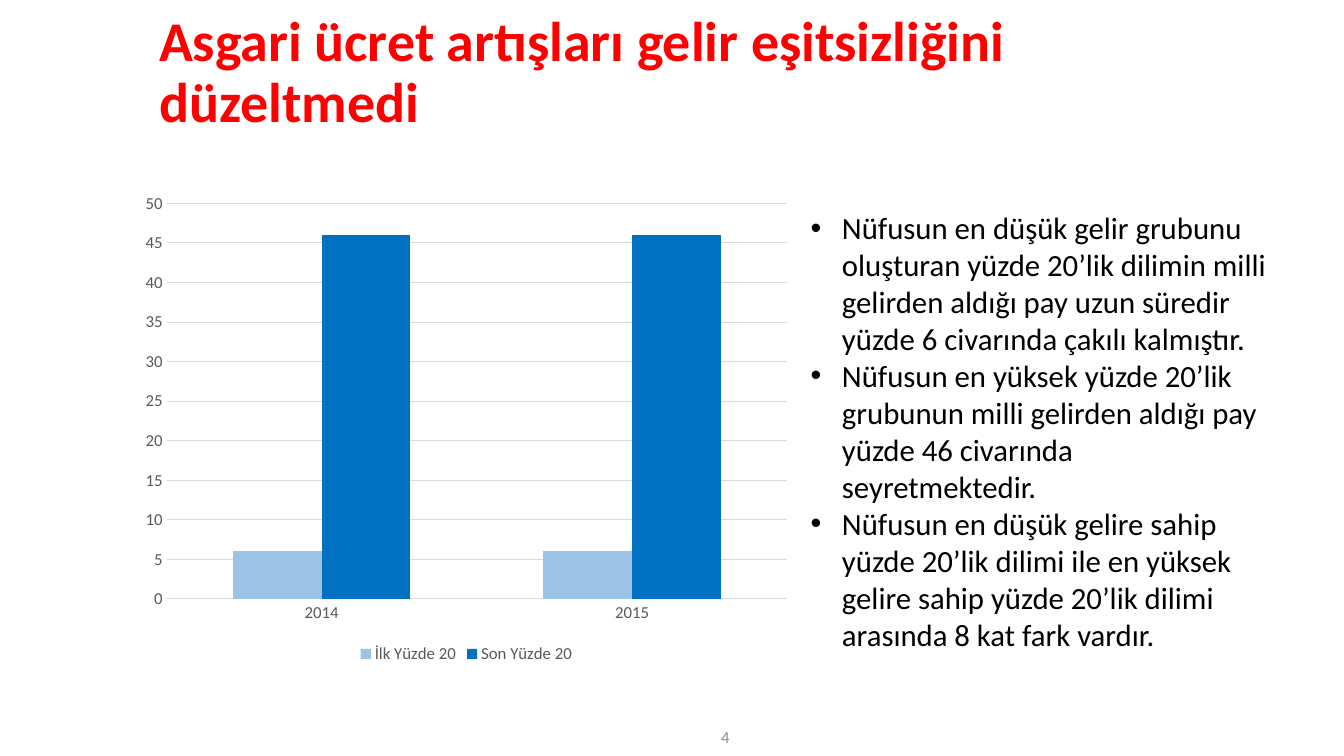
"""Builds a slide on minimum wage rises and income inequality."""
from dataclasses import dataclass

from lxml import etree
from pptx import Presentation
from pptx import util as u
from pptx.chart.data import CategoryChartData
from pptx.dml.color import RGBColor
from pptx.enum import chart as ch, text
from pptx.oxml.ns import qn


@dataclass(frozen=True)
class Theme:
    font: str = "Calibri"
    title: str = "FF0000"
    body: str = "000000"
    label: str = "595959"
    grid: str = "D9D9D9"
    page: str = "8C8C8C"
    low: str = "9DC3E6"
    high: str = "0070C0"
    big: int = 40
    mid: int = 22
    small: int = 12


class Deck:
    def __init__(self, theme):
        self.theme = theme
        self.prs = Presentation()
        self.prs.slide_width = u.Cm(33.87)
        self.prs.slide_height = u.Cm(19.05)
        self.slide = self.prs.slides.add_slide(self.prs.slide_layouts[6])

    def style(self, font, size, color, bold=False):
        font.name = self.theme.font
        font.size = u.Pt(size)
        font.bold = bold
        font.color.rgb = RGBColor.from_string(color)

    def bullet(self, para):
        props = para._p.get_or_add_pPr()
        indent = u.Cm(0.79)
        props.set("marL", str(indent))
        props.set("indent", str(-indent))
        etree.SubElement(props, qn("a:buFont"), typeface="Arial")
        etree.SubElement(props, qn("a:buChar"), char="•")

    def text(self, box, lines, size, color, bold=False, bullets=False,
             anchor=text.MSO_ANCHOR.MIDDLE, align=text.PP_ALIGN.LEFT, space=1.0):
        frame = self.slide.shapes.add_textbox(*map(u.Cm, box)).text_frame
        frame.word_wrap = True
        frame.vertical_anchor = anchor
        for i, line in enumerate(lines):
            para = frame.paragraphs[0] if i == 0 else frame.add_paragraph()
            para.text = line
            para.alignment = align
            para.line_spacing = space
            if bullets:
                self.bullet(para)
            self.style(para.font, size, color, bold)

    def chart(self, box, years, series):
        theme = self.theme
        data = CategoryChartData()
        data.categories = years
        for name, vals, _ in series:
            data.add_series(name, vals)
        kind = ch.XL_CHART_TYPE.COLUMN_CLUSTERED
        chart = self.slide.shapes.add_chart(kind, *map(u.Cm, box), data).chart
        self.style(chart.font, theme.small, theme.label)
        chart.has_title = False
        chart.has_legend = True
        chart.legend.position = ch.XL_LEGEND_POSITION.BOTTOM
        chart.legend.include_in_layout = False
        self.style(chart.legend.font, theme.small, theme.label)
        for axis in (chart.category_axis, chart.value_axis):
            axis.major_tick_mark = ch.XL_TICK_MARK.NONE
            axis.format.line.fill.background()
            self.style(axis.tick_labels.font, theme.small, theme.label)
        axis = chart.value_axis
        axis.minimum_scale, axis.maximum_scale, axis.major_unit = 0, 50, 5
        line = axis.major_gridlines.format.line
        line.color.rgb = RGBColor.from_string(theme.grid)
        line.width = u.Pt(0.75)
        plot = chart.plots[0]
        plot.gap_width, plot.overlap = 150, 0
        plot.vary_by_categories = False
        for bars, (_, _, color) in zip(plot.series, series):
            bars.format.fill.solid()
            bars.format.fill.fore_color.rgb = RGBColor.from_string(color)


def main():
    theme = Theme()
    deck = Deck(theme)
    deck.text((3.76, 0.91, 28.19, 1.91),
              ["Asgari ücret artışları gelir eşitsizliğini düzeltmedi"],
              theme.big, theme.title, bold=True, space=0.9)
    deck.chart((3.33, 4.63, 16.85, 12.2), ["2014", "2015"], [
        ("İlk Yüzde 20", (6, 6), theme.low),
        ("Son Yüzde 20", (46, 46), theme.high),
    ])
    deck.text((20.18, 5.14, 12.12, 11.53), [
        "Nüfusun en düşük gelir grubunu oluşturan yüzde 20’lik dilimin milli "
        "gelirden aldığı pay uzun süredir yüzde 6 civarında çakılı kalmıştır.",
        "Nüfusun en yüksek yüzde 20’lik grubunun milli gelirden aldığı pay "
        "yüzde 46 civarında seyretmektedir.",
        "Nüfusun en düşük gelire sahip yüzde 20’lik dilimi ile en yüksek "
        "gelire sahip yüzde 20’lik dilimi arasında 8 kat fark vardır.",
    ], theme.mid, theme.body, bullets=True, anchor=text.MSO_ANCHOR.TOP)
    deck.text((11.02, 18.06, 7.62, 1.02), ["4"], theme.small, theme.page,
              align=text.PP_ALIGN.RIGHT)
    deck.prs.save("out.pptx")


if __name__ == "__main__":
    main()
